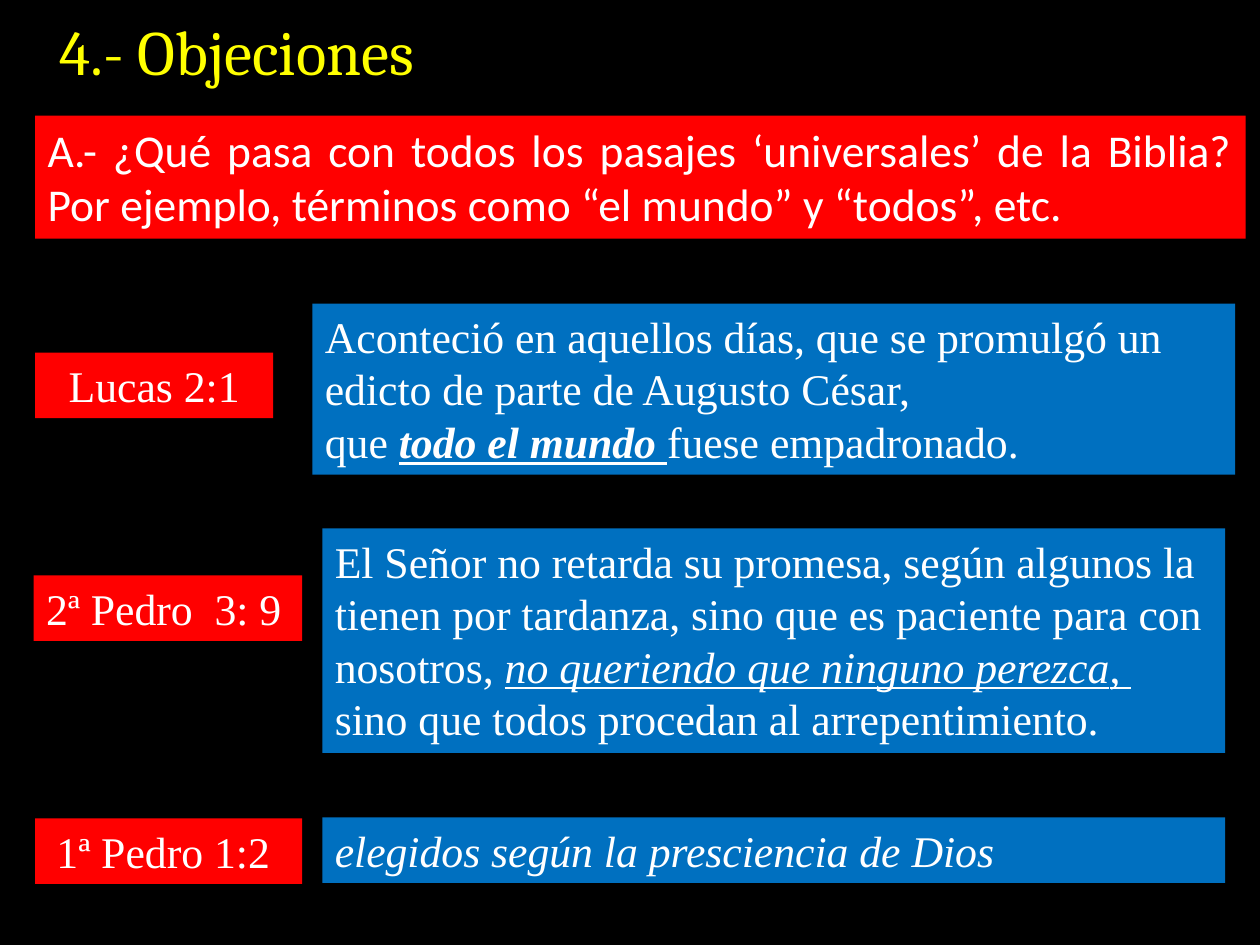
from pptx import Presentation
from pptx.dml.color import RGBColor
from pptx.enum.shapes import MSO_SHAPE
from pptx.enum.text import MSO_ANCHOR, PP_ALIGN
from pptx.util import Cm, Pt

BLACK, WHITE, YELLOW = "000000", "FFFFFF", "FFFF00"
RED, BLUE = "FF0000", "0070C0"
TITLE_FONT, QUESTION_FONT, VERSE_FONT = "Cambria", "Calibri", "Times New Roman"
LABEL_HEIGHT = 1.32


def rgb(color):
    return RGBColor.from_string(color)


def paint(fill, color):
    fill.solid()
    fill.fore_color.rgb = rgb(color)


class SlideBuilder:
    """Holds the current slide and the verse text style."""

    font = VERSE_FONT
    size = 25

    def __init__(self, presentation):
        self.slide = presentation.slides.add_slide(presentation.slide_layouts[5])
        paint(self.slide.background.fill, BLACK)

    def add_text(self, shape, paragraphs, align, font, size, color=WHITE):
        """Fill the shape; each run is (text, marks), with marks from "b", "i" and "u"."""
        frame = shape.text_frame
        frame.word_wrap = True
        frame.vertical_anchor = MSO_ANCHOR.TOP
        for index, runs in enumerate(paragraphs):
            paragraph = frame.add_paragraph() if index else frame.paragraphs[0]
            paragraph.alignment = align
            for text, marks in runs:
                run = paragraph.add_run()
                run.text = text
                run.font.name = font
                run.font.size = Pt(size)
                run.font.bold = "b" in marks
                run.font.italic = "i" in marks
                run.font.underline = "u" in marks
                run.font.color.rgb = rgb(color)

    def title(self, text, left, top, width, height):
        shape = self.slide.shapes.title
        shape.left, shape.top = Cm(left), Cm(top)
        shape.width, shape.height = Cm(width), Cm(height)
        self.add_text(shape, [[(text, "")]], PP_ALIGN.JUSTIFY, TITLE_FONT, 36, YELLOW)

    def box(self, paragraphs, left, top, width, height, color,
            align=PP_ALIGN.LEFT, font=font, size=size):
        shape = self.slide.shapes.add_shape(
            MSO_SHAPE.RECTANGLE, Cm(left), Cm(top), Cm(width), Cm(height))
        shape.shadow.inherit = False
        paint(shape.fill, color)
        shape.line.fill.background()
        self.add_text(shape, paragraphs, align, font, size)

    def reference(self, text, left, top, width, align=PP_ALIGN.CENTER):
        self.box([[(text, "")]], left, top, width, LABEL_HEIGHT, RED, align)

    def verse(self, paragraphs, left, top, width, height):
        self.box(paragraphs, left, top, width, height, BLUE)


def main():
    presentation = Presentation()
    presentation.slide_width, presentation.slide_height = Cm(25.4), Cm(19.05)
    builder = SlideBuilder(presentation)

    builder.title("4.- Objeciones", 0.94, 0.13, 23.09, 1.8)
    builder.box(
        [[("A.- ¿Qué pasa con todos los pasajes ‘universales’ de la Biblia? "
           "Por ejemplo, términos como “el mundo” y “todos”, etc.", "")]],
        0.71, 2.33, 24.4, 2.48, RED, PP_ALIGN.JUSTIFY, QUESTION_FONT, 26)

    builder.reference("Lucas 2:1", 0.71, 7.11, 4.8)
    builder.verse(
        [[("Aconteció en aquellos días, que se promulgó un edicto de parte "
           "de Augusto César,", "")],
         [("que ", ""), ("todo el mundo", "biu"), (" ", "bu"),
          ("fuese empadronado.", "")]],
        6.3, 6.12, 18.6, 3.45)

    builder.reference("2ª Pedro  3: 9", 0.68, 11.6, 5.41, PP_ALIGN.LEFT)
    builder.verse(
        [[("El Señor no retarda su promesa, según algunos la tienen por "
           "tardanza, sino que es paciente para con nosotros, ", ""),
          ("no queriendo que ninguno perezca", "iu"), (", ", "u")],
         [("sino que todos procedan al arrepentimiento.", "")]],
        6.5, 10.65, 18.2, 4.53)

    builder.reference("1ª Pedro 1:2 ", 0.71, 16.5, 5.38)
    builder.verse([[("elegidos según la presciencia de Dios", "i")]],
                  6.5, 16.48, 18.2, LABEL_HEIGHT)

    presentation.save("out.pptx")


if __name__ == "__main__":
    main()
